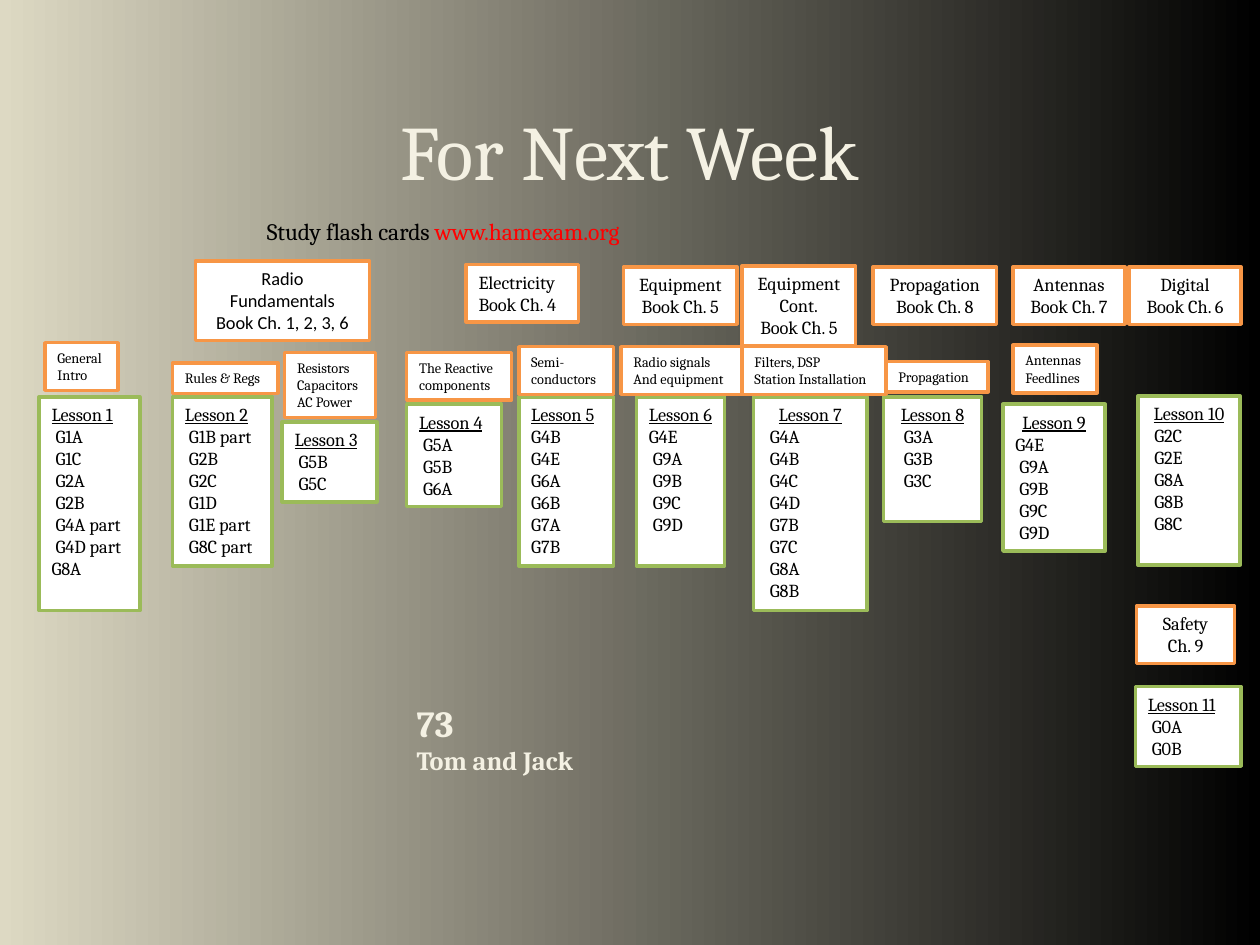
"""Build the closing slide with the lesson plan by chapter and topic."""
from dataclasses import dataclass

from pptx import Presentation, util as u
from pptx.dml.color import RGBColor
from pptx.enum import shapes, text


@dataclass(frozen=True)
class Theme:
    serif: str = "Cambria"
    sans: str = "Calibri"
    cream: str = "F4F1E3"
    ink: str = "000000"
    link: str = "FF0000"
    paper: str = "FFFFFF"
    lesson: str = "9BBB59"
    chapter: str = "F79646"
    sand: str = "DDD9C3"
    title: float = 44
    study: float = 13.5
    sign: float = 21
    names: float = 15
    body: float = 10.5
    small: float = 8.2
    border: float = 2


THEME = Theme()
LEFT, CENTER = text.PP_ALIGN.LEFT, text.PP_ALIGN.CENTER
SPACE, INSET_X, INSET_Y = 0.08, 0.25, 0.13
LINE_HEIGHT = {THEME.body: 0.45, THEME.small: 0.35}

# number, left, top, width, heading alignment, indent, spare lines, flush code, codes
LESSONS = [
    (1, 0.79, 8, 2.03, LEFT, 1, 1, "G8A", ["G1A", "G1C", "G2A", "G2B", "G4A part", "G4D part", "G8A"]),
    (9, 20.22, 8.15, 2.06, CENTER, 1, 0, "G4E", ["G4E", "G9A", "G9B", "G9C", "G9D"]),
    (7, 15.19, 8, 2.29, CENTER, 1, 0, "", ["G4A", "G4B", "G4C", "G4D", "G7B", "G7C", "G8A", "G8B"]),
    (4, 8.2, 8.15, 1.91, LEFT, 1, 0, "", ["G5A", "G5B", "G6A"]),
    (11, 22.89, 13.84, 2.13, LEFT, 1, 0, "", ["G0A", "G0B"]),
    (3, 5.69, 8.51, 1.91, LEFT, 1, 0, "", ["G5B", "G5C"]),
    (5, 10.46, 8, 1.91, LEFT, 0, 0, "", ["G4B", "G4E", "G6A", "G6B", "G7A", "G7B"]),
    (8, 17.81, 8, 1.98, CENTER, 2, 1, "", ["G3A", "G3B", "G3C"]),
    (10, 22.94, 7.98, 2.06, CENTER, 1, 1, "", ["G2C", "G2E", "G8A", "G8B", "G8C"]),
    (2, 3.48, 8, 2.01, LEFT, 1, 0, "", ["G1B part", "G2B", "G2C", "G1D", "G1E part", "G8C part"]),
    (6, 12.83, 8, 1.78, CENTER, 1, 1, "G4E", ["G4E", "G9A", "G9B", "G9C", "G9D"]),
]
CHAPTERS = [
    (3.94, 5.26, 3.51, CENTER, THEME.sans, ["Radio", "Fundamentals", "Book Ch. 1, 2, 3, 6"]),
    (9.4, 5.33, 2.26, LEFT, THEME.serif, ["Electricity", "Book Ch. 4"]),
    (12.57, 5.38, 2.29, CENTER, THEME.serif, ["Equipment", "Book Ch. 5"]),
    (14.96, 5.36, 2.29, CENTER, THEME.serif, ["Equipment", "Cont.", "Book Ch. 5"]),
    (17.6, 5.38, 2.49, CENTER, THEME.serif, ["Propagation", "Book Ch. 8"]),
    (20.42, 5.38, 2.26, CENTER, THEME.serif, ["Antennas", "Book Ch. 7"]),
    (22.76, 5.38, 2.26, CENTER, THEME.serif, ["Digital", "Book Ch. 6"]),
    (22.91, 12.22, 1.98, CENTER, THEME.serif, ["Safety", "Ch. 9"]),
]
TOPICS = [
    (0.91, 6.91, 1.47, ["General", "Intro"]),
    (3.48, 7.32, 2.13, ["Rules & Regs"]),
    (5.74, 7.11, 1.83, ["Resistors", "Capacitors", "AC Power"]),
    (8.2, 7.11, 2.11, ["The Reactive", "components"]),
    (10.46, 6.99, 1.91, ["Semi-", "conductors"]),
    (12.52, 6.99, 2.44, ["Radio signals", "And equipment"]),
    (14.96, 6.99, 2.9, ["Filters, DSP", "Station Installation"]),
    (20.42, 6.96, 1.7, ["Antennas", "Feedlines"]),
    (17.86, 7.29, 2.06, ["Propagation"]),
]


def add_run(paragraph, words, size, color=THEME.ink, face=THEME.serif, bold=False, underline=False):
    run = paragraph.add_run()
    run.text = words
    font = run.font
    font.name, font.size, font.bold, font.underline = face, u.Pt(size), bold, underline
    font.color.rgb = RGBColor.from_string(color)


def next_paragraph(frame, index, align=LEFT, indent=0):
    paragraph = frame.add_paragraph() if index else frame.paragraphs[0]
    paragraph.alignment = align
    if indent:
        properties = paragraph._p.get_or_add_pPr()
        properties.set("marL", str(u.Cm(indent * SPACE)))
        properties.set("indent", "0")
    return paragraph


def add_card(slide, left, top, width, rows, size, border, face=THEME.serif, spare=0):
    height = 2 * INSET_Y + LINE_HEIGHT[size] * (len(rows) + spare)
    card = slide.shapes.add_shape(shapes.MSO_SHAPE.RECTANGLE, *map(u.Cm, (left, top, width, height)))
    card.shadow.inherit = False
    card.fill.solid()
    card.fill.fore_color.rgb = RGBColor.from_string(THEME.paper)
    card.line.color.rgb = RGBColor.from_string(border)
    card.line.width = u.Pt(THEME.border)
    frame = card.text_frame
    frame.word_wrap = True
    frame.vertical_anchor = text.MSO_ANCHOR.TOP
    centered = rows[0][1] == CENTER and rows[-1][1] == CENTER
    frame.margin_left = u.Cm(0 if centered else INSET_X)
    frame.margin_right = u.Cm(INSET_X if rows[0][1] != rows[-1][1] else 0)
    frame.margin_top = frame.margin_bottom = u.Cm(INSET_Y)
    for index, (words, align, indent, underline) in enumerate(rows):
        add_run(next_paragraph(frame, index, align, indent), words, size, face=face, underline=underline)


def add_words(slide, box, lines, align=LEFT, anchor=text.MSO_ANCHOR.TOP):
    frame = slide.shapes.add_textbox(*map(u.Cm, box)).text_frame
    frame.word_wrap = True
    frame.vertical_anchor = anchor
    for index, runs in enumerate(lines):
        paragraph = next_paragraph(frame, index, align)
        for run in runs:
            add_run(paragraph, *run)


def main():
    deck = Presentation()
    deck.slide_width, deck.slide_height = u.Cm(25.4), u.Cm(19.05)
    slide = deck.slides.add_slide(deck.slide_layouts[6])
    backdrop = slide.background.fill
    backdrop.gradient()
    backdrop.gradient_angle = 0
    for stop, color, position in zip(backdrop.gradient_stops, (THEME.sand, THEME.ink), (0, 1)):
        stop.color.rgb = RGBColor.from_string(color)
        stop.position = position

    add_words(slide, (5.08, 1.7, 15.24, 2.64), [[("For Next Week", THEME.title, THEME.cream)]],
              CENTER, text.MSO_ANCHOR.MIDDLE)
    add_words(slide, (5.13, 4.24, 8.08, 0.84), [[("Study flash cards ", THEME.study),
                                                ("www.hamexam.org", THEME.study, THEME.link)]])
    add_words(slide, (8.15, 14, 3.9, 1.8), [
        [("73", THEME.sign, THEME.cream, THEME.serif, True)],
        [("Tom and Jack", THEME.names, THEME.cream, THEME.serif, True)]])

    for number, left, top, width, align, indent, spare, flush, codes in LESSONS:
        rows = [(f"Lesson {number}", align, 0, True)]
        rows += [(code, LEFT, 0 if code == flush else indent, False) for code in codes]
        add_card(slide, left, top, width, rows, THEME.body, THEME.lesson, spare=spare)
    for left, top, width, align, face, lines in CHAPTERS:
        rows = [(line, align, 0, False) for line in lines]
        add_card(slide, left, top, width, rows, THEME.body, THEME.chapter, face)
    for left, top, width, lines in TOPICS:
        rows = [(line, LEFT, 0, False) for line in lines]
        add_card(slide, left, top, width, rows, THEME.small, THEME.chapter)
    deck.save("out.pptx")


if __name__ == "__main__":
    main()
